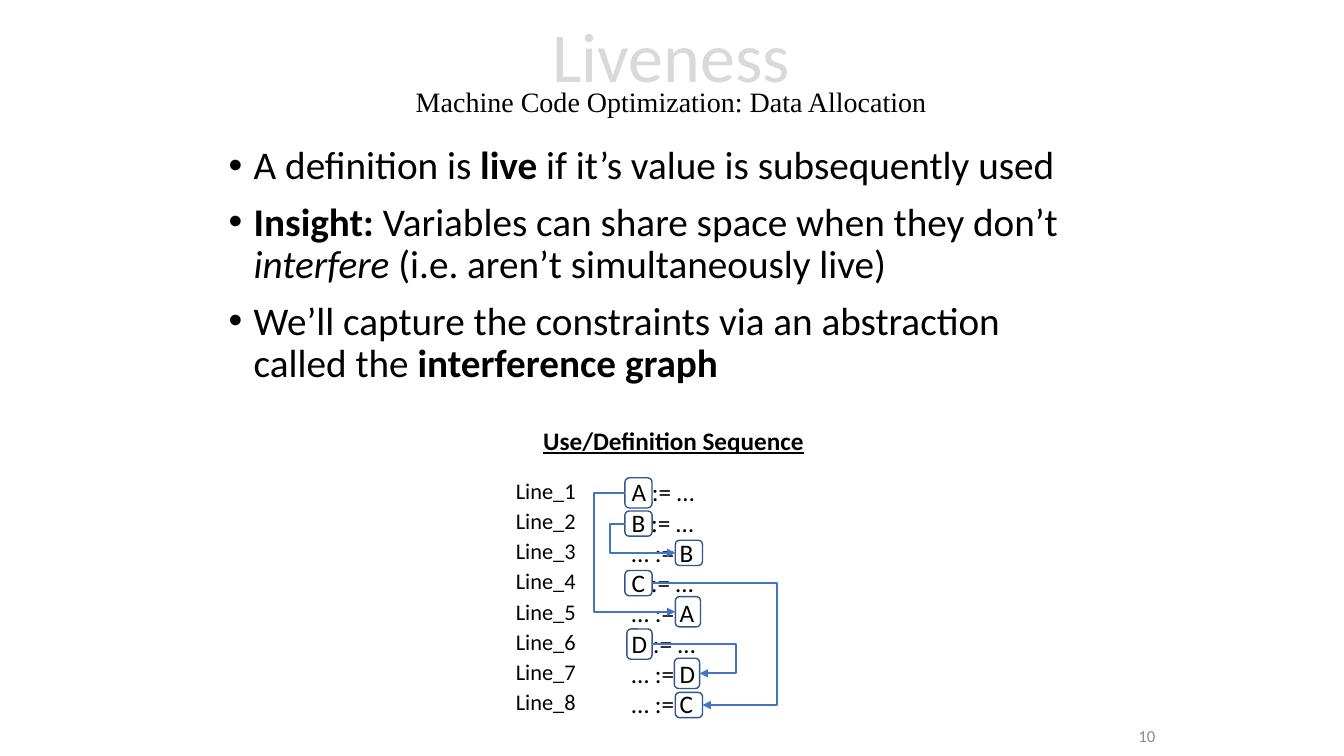
from lxml.etree import SubElement
from pptx import Presentation
from pptx.dml.color import RGBColor
from pptx.enum.shapes import MSO_CONNECTOR, MSO_SHAPE
from pptx.enum.text import MSO_ANCHOR, MSO_AUTO_SIZE, PP_ALIGN
from pptx.oxml import parse_xml
from pptx.oxml.ns import nsdecls, qn
from pptx.util import Pt

COLORS = {"title": "D9D9D9", "text": "000000", "number": "8C8C8C",
          "arrow": "4472C4", "box": "325491"}

prs = Presentation()
prs.slide_width, prs.slide_height = Pt(960), Pt(540)
slide = prs.slides.add_slide(prs.slide_layouts[6])
shapes = slide.shapes


def add_run(paragraph, text, size, color="text", font="Calibri", **formats):
    run = paragraph.add_run()
    run.text = text
    run.font.color.rgb = RGBColor.from_string(COLORS[color])
    for name, value in {"size": Pt(size), "name": font, **formats}.items():
        setattr(run.font, name, value)
    return run


def add_frame(left, top, width, height, wrap=True, anchor=MSO_ANCHOR.TOP):
    """Add a text box and return its text frame; unwrapped boxes fit their text."""
    frame = shapes.add_textbox(Pt(left), Pt(top), Pt(width), Pt(height)).text_frame
    frame.word_wrap = wrap
    frame.vertical_anchor = anchor
    frame.auto_size = MSO_AUTO_SIZE.NONE if wrap else MSO_AUTO_SIZE.SHAPE_TO_FIT_TEXT
    return frame


# Title and subtitle
heading = add_frame(169.2, 2.2, 620.6, 104.4, anchor=MSO_ANCHOR.MIDDLE).paragraphs[0]
heading.alignment = PP_ALIGN.CENTER
heading.line_spacing = 0.7
title = add_run(heading, "Liveness", 50, "title")
title.font._element.insert(0, parse_xml(
    f'<a:ln {nsdecls("a")} w="12700"><a:solidFill>'
    f'<a:srgbClr val="{COLORS["text"]}"/></a:solidFill></a:ln>'))
heading.add_line_break()
add_run(heading, "Machine Code Optimization: Data Allocation", 20, font="Times New Roman")

# Bullet points
BOLD, ITALIC = {"bold": True}, {"italic": True}
points = [
    [("A definition is ", {}), ("live", BOLD), (" if it’s value is subsequently used", {})],
    [("Insight: ", BOLD), ("Variables can share space when they don’t ", {}),
     ("interfere ", ITALIC), ("(i.e. aren’t simultaneously live)", {})],
    [("We’ll capture the constraints via an abstraction called the ", {}),
     ("interference graph", BOLD)],
]
body = add_frame(156.2, 100.8, 629.3, 356.4)
for i, point in enumerate(points):
    paragraph = body.paragraphs[0] if i == 0 else body.add_paragraph()
    paragraph.line_spacing = 0.9
    paragraph.space_before = Pt(10)
    properties = paragraph._p.get_or_add_pPr()
    properties.set("marL", str(Pt(18)))
    properties.set("indent", str(-Pt(18)))
    SubElement(properties, qn("a:buFont"), typeface="Arial")
    SubElement(properties, qn("a:buChar"), char="•")
    for text, formats in point:
        add_run(paragraph, text, 28, **formats)

# Page number
page = add_frame(670.3, 511.2, 162, 28.8, anchor=MSO_ANCHOR.MIDDLE).paragraphs[0]
page.alignment = PP_ALIGN.RIGHT
add_run(page, "10", 12, "number")

# Use/definition sequence with its line labels
sequence_heading = add_frame(380.9, 300.2, 202.3, 28.8, wrap=False).paragraphs[0]
add_run(sequence_heading, "Use/Definition Sequence", 18, bold=True, underline=True)

statements = ["A := …", "B := …", "… := B", "C := …",
              "… := A", "D := …", "… := D", "… := C"]
code = add_frame(444.2, 337, 64.8, 181.4, wrap=False)
for i, statement in enumerate(statements):
    paragraph = code.paragraphs[0] if i == 0 else code.add_paragraph()
    add_run(paragraph, statement, 18)
    label = add_frame(360.7, 337 + 21.6 * i, 57.6, 26.6, wrap=False).paragraphs[0]
    label.alignment = PP_ALIGN.RIGHT
    add_run(label, f"Line_{i + 1}", 16)

# Each variable: definition box, use box, and x of the arrow's upright part
live_ranges = [
    ((446.4, 341.3, 19.4, 21.6), (482.4, 426.2, 18, 21.6), 424.1),
    ((446.4, 365, 19.4, 18), (482.4, 385.9, 19.4, 18), 435.6),
    ((446.4, 407.5, 19.4, 18), (482.4, 494.6, 19.4, 18), 555.1),
    ((447.8, 449.3, 18, 21.6), (481.7, 470.2, 18, 21.6), 525.6),
]
for definition, use, bend in live_ranges:
    ends = []
    for left, top, width, height in (definition, use):
        box = shapes.add_shape(MSO_SHAPE.ROUNDED_RECTANGLE,
                               Pt(left), Pt(top), Pt(width), Pt(height))
        box.shadow.inherit = False
        box.fill.background()
        box.line.color.rgb = RGBColor.from_string(COLORS["box"])
        box.line.width = Pt(1)
        ends.append((left if bend < left else left + width, top + height / 2))

    (start_x, start_y), (end_x, end_y) = ends
    arrow = shapes.add_connector(MSO_CONNECTOR.ELBOW,
                                 Pt(start_x), Pt(start_y), Pt(end_x), Pt(end_y))
    arrow.line.color.rgb = RGBColor.from_string(COLORS["arrow"])
    arrow.line.width = Pt(1.5)
    SubElement(arrow.line._get_or_add_ln(), qn("a:tailEnd"), type="triangle")
    arrow_properties = arrow._element.spPr
    SubElement(arrow_properties, qn("a:effectLst"))
    bend_share = round((bend - start_x) / (end_x - start_x) * 100000)
    adjustments = arrow_properties.find(qn("a:prstGeom")).find(qn("a:avLst"))
    SubElement(adjustments, qn("a:gd"), name="adj1", fmla=f"val {bend_share}")

prs.save("out.pptx")
